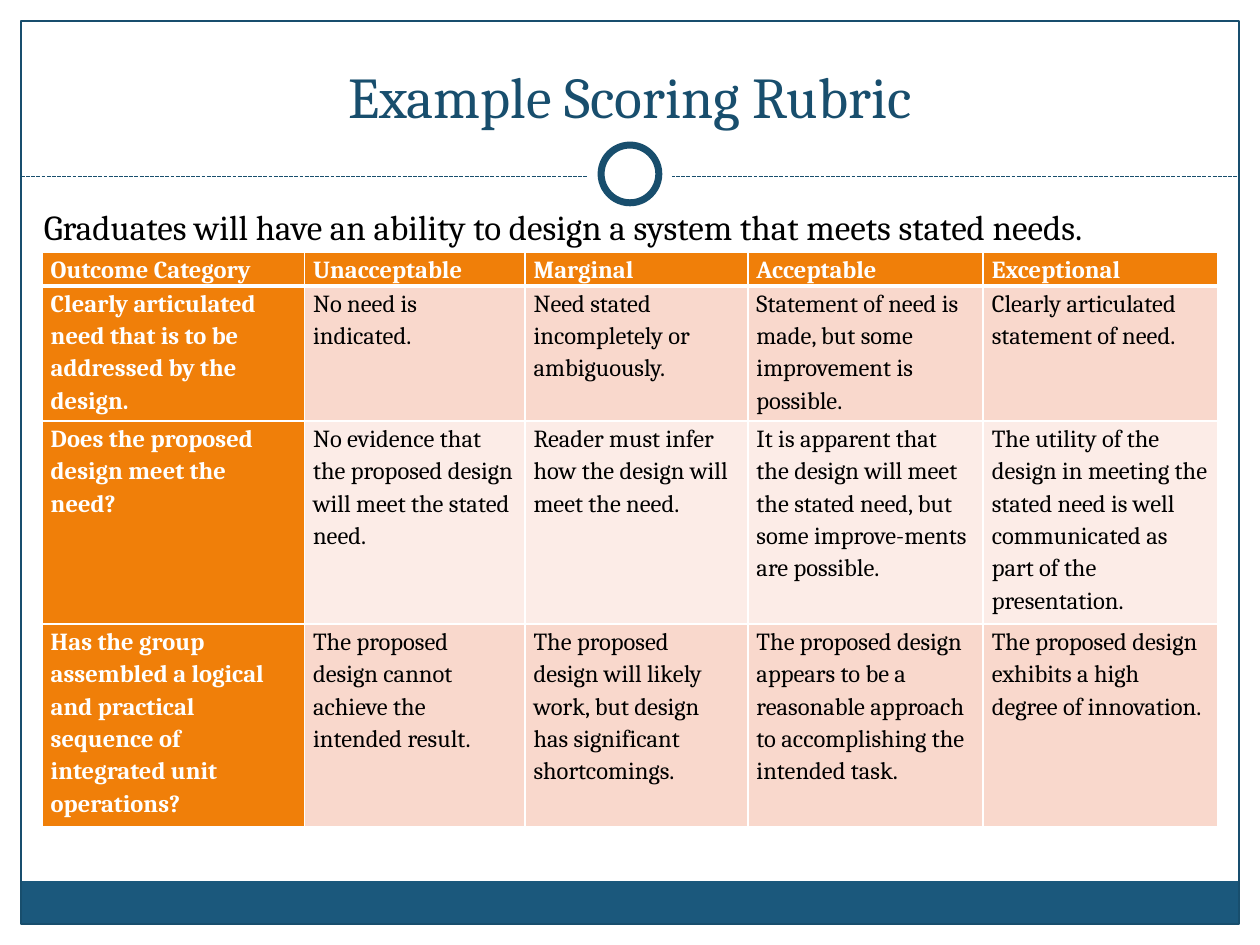
from lxml.etree import SubElement
from pptx import Presentation
from pptx.dml.color import RGBColor
from pptx.enum.dml import MSO_LINE_DASH_STYLE as Dash
from pptx.enum.shapes import MSO_CONNECTOR_TYPE as Connector, MSO_SHAPE as Shape
from pptx.enum.text import MSO_ANCHOR as Anchor, PP_ALIGN as Align
from pptx.oxml.ns import qn
from pptx.util import Pt

FONT = "Cambria"
COLORS = {
    "white": "FFFFFF", "black": "000000", "navy": "184E6D", "band": "1B587C",
    "orange": "F07F09", "peach": "F9D8CC", "pale": "FCECE7",
}
WIDTH, HEIGHT, MARGIN = 720, 540, 12

COLUMN_WIDTHS = [149.9, 126, 127.4, 134.5, 134.2]
ROW_HEIGHTS = [18.8, 77.1, 116, 115.4]
RUBRIC = [
    ["Outcome Category", "Unacceptable", "Marginal", "Acceptable", "Exceptional"],
    ["Clearly articulated need that is to be addressed by the design.",
     "No need is indicated.",
     "Need stated incompletely or ambiguously.",
     "Statement of need is made, but some improvement is possible.",
     "Clearly articulated statement of need."],
    ["Does the proposed design meet the need?",
     "No evidence that the proposed design will meet the stated need.",
     "Reader must infer how the design will meet the need.",
     "It is apparent that the design will meet the stated need, but some "
     "improve-ments are possible.",
     "The utility of the design in meeting the stated need is well communicated "
     "as part of the presentation."],
    ["Has the group assembled a logical and practical sequence of integrated "
     "unit operations?",
     "The proposed design cannot achieve the intended result.",
     "The proposed design will likely work, but design has significant shortcomings.",
     "The proposed design appears to be a reasonable approach to accomplishing "
     "the intended task.",
     "The proposed design exhibits a high degree of innovation."],
]


def rgb(name):
    return RGBColor.from_string(COLORS[name])


def add_shape(page, kind, box, fill=None, line=None, weight=0.75):
    shape = page.shapes.add_shape(kind, *map(Pt, box))
    shape.shadow.inherit = False
    if fill:
        shape.fill.solid()
        shape.fill.fore_color.rgb = rgb(fill)
    else:
        shape.fill.background()
    if line:
        shape.line.color.rgb = rgb(line)
        shape.line.width = Pt(weight)
    else:
        shape.line.fill.background()


def write(frame, text, size, color, bold=False, **para_format):
    frame.word_wrap = True
    para = frame.paragraphs[0]
    for name, value in para_format.items():
        setattr(para, name, value)
    span = para.add_run()
    span.text = text
    for name, value in {"name": FONT, "size": Pt(size), "bold": bold}.items():
        setattr(span.font, name, value)
    span.font.color.rgb = rgb(color)


def add_text(page, box, text, size, color, anchor=Anchor.TOP, align=Align.LEFT):
    frame = page.shapes.add_textbox(*map(Pt, box)).text_frame
    frame.vertical_anchor = anchor
    write(frame, text, size, color, alignment=align)


def add_frame(page, box):
    left, top, width, height = box
    band = 24.5
    # Footer band and page border
    add_shape(page, Shape.RECTANGLE,
              (left, top + height - band, width, band), fill="band")
    add_shape(page, Shape.RECTANGLE, box, line="navy")

    # Dashed divider under the title
    y = top + 88.8
    ends = map(Pt, (left, y, left + width, y))
    divider = page.shapes.add_connector(Connector.STRAIGHT, *ends)
    divider.line.color.rgb = rgb("navy")
    divider.line.width = Pt(0.75)
    divider.line.dash_style = Dash.SQUARE_DOT
    properties = divider.element.find(qn("p:spPr"))
    SubElement(properties, qn("a:effectLst"))

    # Ring on the divider, with a white disc that interrupts it
    center_x, center_y = left + width / 2, top + 87.4
    for size, line in ((48, None), (33, "navy")):
        ring = (center_x - size / 2, center_y - size / 2, size, size)
        add_shape(page, Shape.OVAL, ring, fill="white", line=line, weight=4)


def set_borders(cell, bottom):
    properties = cell._tc.get_or_add_tcPr()
    for side, weight in {"L": 1, "R": 1, "T": 1, "B": bottom}.items():
        line = SubElement(properties, qn(f"a:ln{side}"), w=str(Pt(weight)))
        fill = SubElement(line, qn("a:solidFill"))
        SubElement(fill, qn("a:srgbClr"), val=COLORS["white"])


def add_rubric(page, left, top):
    size = map(Pt, (left, top, sum(COLUMN_WIDTHS), sum(ROW_HEIGHTS)))
    table = page.shapes.add_table(len(RUBRIC), len(COLUMN_WIDTHS), *size).table
    for column, width in zip(table.columns, COLUMN_WIDTHS):
        column.width = Pt(width)
    for row, height in zip(table.rows, ROW_HEIGHTS):
        row.height = Pt(height)

    for r, texts in enumerate(RUBRIC):
        gap = Pt(3 if r else 0)
        for c, text in enumerate(texts):
            heading = r == 0 or c == 0
            cell = table.cell(r, c)
            set_borders(cell, bottom=1 if r else 3)
            cell.fill.solid()
            body = "peach" if r % 2 else "pale"
            cell.fill.fore_color.rgb = rgb("orange" if heading else body)
            margins = {"margin_left": 5, "margin_right": 5,
                       "margin_top": 0, "margin_bottom": 0}
            for name, value in margins.items():
                setattr(cell, name, Pt(value))
            write(cell.text_frame, text, 14, "white" if heading else "black",
                  bold=heading, line_spacing=1.15,
                  space_before=gap, space_after=gap)


def main():
    deck = Presentation()
    deck.slide_width, deck.slide_height = Pt(WIDTH), Pt(HEIGHT)
    page = deck.slides.add_slide(deck.slide_layouts[6])
    add_frame(page, (MARGIN, MARGIN, WIDTH - 2 * MARGIN, HEIGHT - 2 * MARGIN))
    add_text(page, (24, 18, 672, 60), "Example Scoring Rubric", 33, "navy",
             Anchor.BOTTOM, Align.CENTER)
    add_text(page, (18, 114, 684, 31.5),
             "Graduates will have an ability to design a system that meets "
             "stated needs.", 20, "black")
    add_rubric(page, 24, 144)
    deck.save("out.pptx")


if __name__ == "__main__":
    main()
